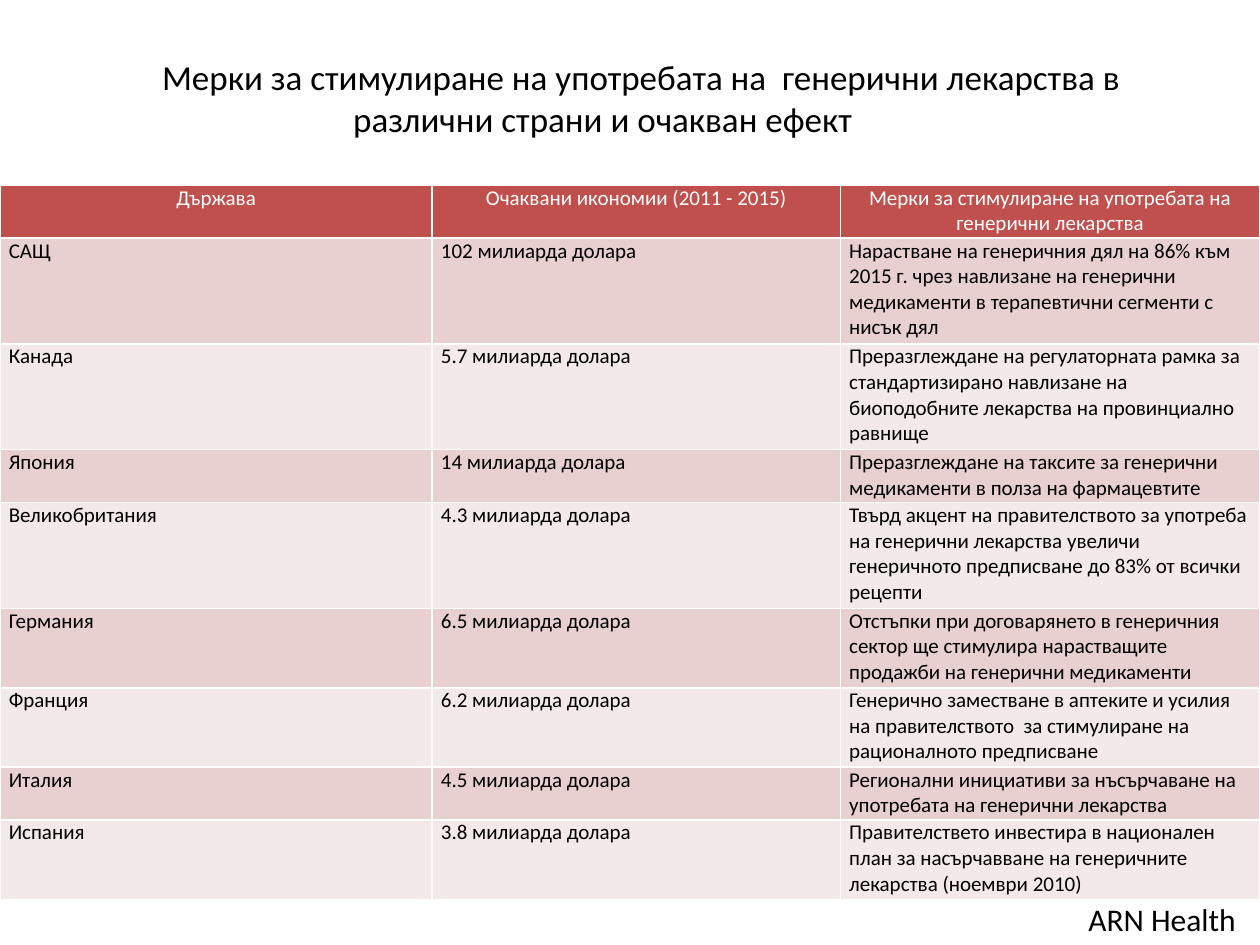
from lxml.etree import SubElement
from pptx import Presentation
from pptx.dml.color import RGBColor
from pptx.enum.text import MSO_ANCHOR, MSO_AUTO_SIZE, PP_ALIGN
from pptx.oxml.ns import qn
from pptx.util import Inches, Pt

BLACK = RGBColor(0x00, 0x00, 0x00)
WHITE = RGBColor(0xFF, 0xFF, 0xFF)
RED = RGBColor(0xC0, 0x50, 0x4D)
ROSE = RGBColor(0xE8, 0xD0, 0xD0)
PALE_ROSE = RGBColor(0xF4, 0xE9, 0xE9)

HEADER = ("Държава", "Очаквани икономии (2011 - 2015)",
          "Мерки за стимулиране на употребата на генерични лекарства")
COUNTRIES = [
    ("САЩ", "102 милиарда долара",
     "Нарастване на генеричния дял на 86% към 2015 г. чрез навлизане на генерични "
     "медикаменти в терапевтични сегменти с нисък дял"),
    ("Канада", "5.7 милиарда долара",
     "Преразглеждане на регулаторната рамка за стандартизирано навлизане на "
     "биоподобните лекарства на провинциално равнище"),
    ("Япония", "14 милиарда долара",
     "Преразглеждане на таксите за генерични медикаменти в полза на фармацевтите"),
    ("Великобритания", "4.3 милиарда долара",
     "Твърд акцент на правителството за употреба на генерични лекарства увеличи "
     "генеричното предписване до 83% от всички рецепти"),
    ("Германия", "6.5 милиарда долара",
     "Отстъпки при договарянето в генеричния сектор ще стимулира нарастващите "
     "продажби на генерични медикаменти"),
    ("Франция", "6.2 милиарда долара",
     "Генерично заместване в аптеките и усилия на правителството  за стимулиране на "
     "рационалното предписване"),
    ("Италия", "4.5 милиарда долара",
     "Регионални инициативи за нъсърчаване на употребата на генерични лекарства"),
    ("Испания", "3.8 милиарда долара",
     "Правителствето инвестира в национален план за насърчавване на генеричните "
     "лекарства (ноември 2010)"),
]
COLUMN_WIDTHS = (3.43, 3.24, 3.33)
LINES_PER_ROW = (2, 4, 4, 2, 4, 3, 3, 2, 3)
LINE_HEIGHT = 0.21


def format_font(paragraph, size, color):
    font = paragraph.runs[0].font
    font.name = "Calibri"
    font.size = Pt(size)
    font.bold = False
    font.color.rgb = color


def add_borders(cell):
    properties = cell._tc.get_or_add_tcPr()
    for side in "LRTB":
        line = SubElement(properties, qn(f"a:ln{side}"), w=str(Pt(1)))
        fill = SubElement(line, qn("a:solidFill"))
        SubElement(fill, qn("a:srgbClr"), val=str(WHITE))


presentation = Presentation()
presentation.slide_width = Inches(10)
presentation.slide_height = Inches(7.5)
slide = presentation.slides.add_slide(presentation.slide_layouts[6])

title = slide.shapes.add_textbox(Inches(0.14), Inches(0.09), Inches(9.29), Inches(1.25))
text_frame = title.text_frame
text_frame.word_wrap = True
text_frame.vertical_anchor = MSO_ANCHOR.MIDDLE
text_frame.margin_top = Inches(0.16)
text_frame.text = ("Мерки за стимулиране на употребата на  генерични лекарства в "
                   "различни страни и очакван ефект")
paragraph = text_frame.paragraphs[0]
paragraph.alignment = PP_ALIGN.CENTER
paragraph._p.get_or_add_pPr().set("indent", str(Inches(0.61)))
format_font(paragraph, 20, BLACK)

rows = [HEADER] + COUNTRIES
table = slide.shapes.add_table(
    len(rows), len(HEADER), Inches(0), Inches(1.47), Inches(10),
    Inches(LINE_HEIGHT * sum(LINES_PER_ROW))).table
for column, width in zip(table.columns, COLUMN_WIDTHS):
    column.width = Inches(width)
for row, lines in zip(table.rows, LINES_PER_ROW):
    row.height = Inches(LINE_HEIGHT * lines)

for row_index, texts in enumerate(rows):
    is_header = row_index == 0
    row_fill = RED if is_header else (PALE_ROSE, ROSE)[row_index % 2]
    for column_index, text in enumerate(texts):
        cell = table.cell(row_index, column_index)
        cell.margin_left = cell.margin_right = Inches(0.07)
        cell.margin_top = cell.margin_bottom = Inches(0)
        add_borders(cell)
        cell.fill.solid()
        cell.fill.fore_color.rgb = row_fill
        cell.text_frame.text = text
        paragraph = cell.text_frame.paragraphs[0]
        paragraph.alignment = PP_ALIGN.CENTER if is_header else PP_ALIGN.LEFT
        format_font(paragraph, 12, WHITE if is_header else BLACK)

source = slide.shapes.add_textbox(Inches(8.54), Inches(7.09), Inches(1.33), Inches(0.4))
text_frame = source.text_frame
text_frame.word_wrap = False
text_frame.auto_size = MSO_AUTO_SIZE.SHAPE_TO_FIT_TEXT
text_frame.margin_right = Inches(0)
text_frame.text = "ARN Health"
format_font(text_frame.paragraphs[0], 18, BLACK)

presentation.save("out.pptx")
